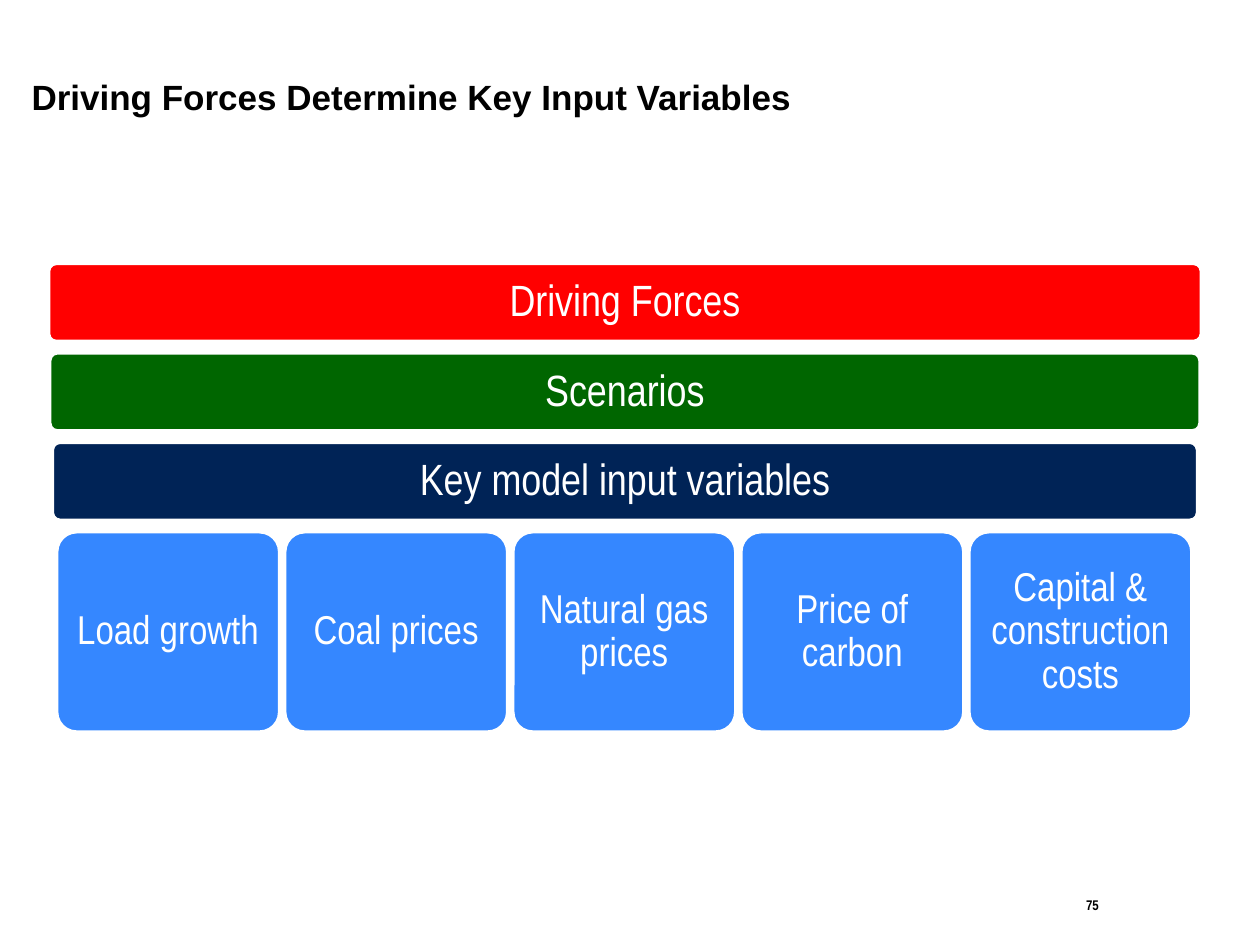
import dataclasses
import pptx
import pptx.dml.color
import pptx.enum.shapes
import pptx.enum.text
import pptx.util

Inches = pptx.util.Inches
Align = pptx.enum.text.PP_ALIGN
Anchor = pptx.enum.text.MSO_ANCHOR


@dataclasses.dataclass(frozen=True)
class Theme:
    """Colours, fonts and type sizes of the slide."""
    ink: str = "000000"
    paper: str = "FFFFFF"
    force: str = "FF0000"
    scene: str = "006600"
    model: str = "002356"
    input: str = "3587FF"
    head: str = "Arial"
    body: str = "Arial Narrow"
    title: int = 20
    bar: int = 25
    card: int = 23
    page: int = 8


THEME = Theme()


def rgb(code):
    """Turn a hex code into a colour."""
    return pptx.dml.color.RGBColor.from_string(code)


def write(frame, text, face, size, color, align, bold=False, space=None):
    """Fill a frame with one formatted paragraph."""
    frame.text = text
    frame.word_wrap = True
    line = frame.paragraphs[0]
    line.alignment = align
    line.line_spacing = space
    for run in line.runs:
        run.font.name = face
        run.font.size = pptx.util.Pt(size)
        run.font.bold = bold
        run.font.color.rgb = rgb(color)


def add_title(slide, text):
    """Place the slide title."""
    title = slide.shapes.title
    title.left, title.top = Inches(0.15), Inches(0.33)
    title.width, title.height = Inches(7.05), Inches(0.92)
    frame = title.text_frame
    write(frame, text, THEME.head, THEME.title, THEME.ink, Align.LEFT, True, 0.85)
    frame.auto_size = pptx.enum.text.MSO_AUTO_SIZE.NONE
    frame.vertical_anchor = Anchor.MIDDLE


def add_page(slide, text):
    """Place the page number."""
    box = slide.shapes.add_textbox(Inches(7.29), Inches(7.07), Inches(1.53), Inches(0.43))
    write(box.text_frame, text, THEME.body, THEME.page, THEME.ink, Align.RIGHT, True)


def add_block(slide, text, left, top, width, height, fill, size):
    """Add a rounded block with a centred label."""
    kind = pptx.enum.shapes.MSO_SHAPE.ROUNDED_RECTANGLE
    block = slide.shapes.add_shape(kind, Inches(left), Inches(top), Inches(width), Inches(height))
    block.adjustments[0] = 0.1
    block.shadow.inherit = False
    block.fill.solid()
    block.fill.fore_color.rgb = rgb(fill)
    block.line.color.rgb = rgb(THEME.paper)
    block.line.width = pptx.util.Pt(2)
    frame = block.text_frame
    write(frame, text, THEME.body, size, THEME.paper, Align.CENTER, space=0.9)
    frame.vertical_anchor = Anchor.MIDDLE
    frame.margin_left = frame.margin_right = Inches(0.1)
    frame.margin_top = frame.margin_bottom = Inches(0.1)


def add_bars(slide, mid, top, step):
    """Stack the full-width bars around one middle line."""
    bars = [
        ("Driving Forces", 9.15, THEME.force),
        ("Scenarios", 9.13, THEME.scene),
        ("Key model input variables", 9.09, THEME.model),
    ]
    for row, (text, width, fill) in enumerate(bars):
        add_block(slide, text, mid - width / 2, top + row * step, width, 0.62, fill, THEME.bar)
    return top + len(bars) * step


def add_cards(slide, left, top, step):
    """Lay out the input variables in one row."""
    cards = ["Load growth", "Coal prices", "Natural gas prices",
             "Price of carbon", "Capital & construction costs"]
    for col, text in enumerate(cards):
        add_block(slide, text, left + col * step, top, 1.77, 1.59, THEME.input, THEME.card)


def main():
    """Build and save the slide."""
    deck = pptx.Presentation()
    deck.slide_width, deck.slide_height = Inches(10), Inches(7.5)
    slide = deck.slides.add_slide(deck.slide_layouts[5])
    add_title(slide, "Driving Forces Determine Key Input Variables")
    add_page(slide, "75")
    base = add_bars(slide, 4.96, 2.09, 0.71)
    add_cards(slide, 0.45, base, 1.81)
    deck.save("out.pptx")


if __name__ == "__main__":
    main()
